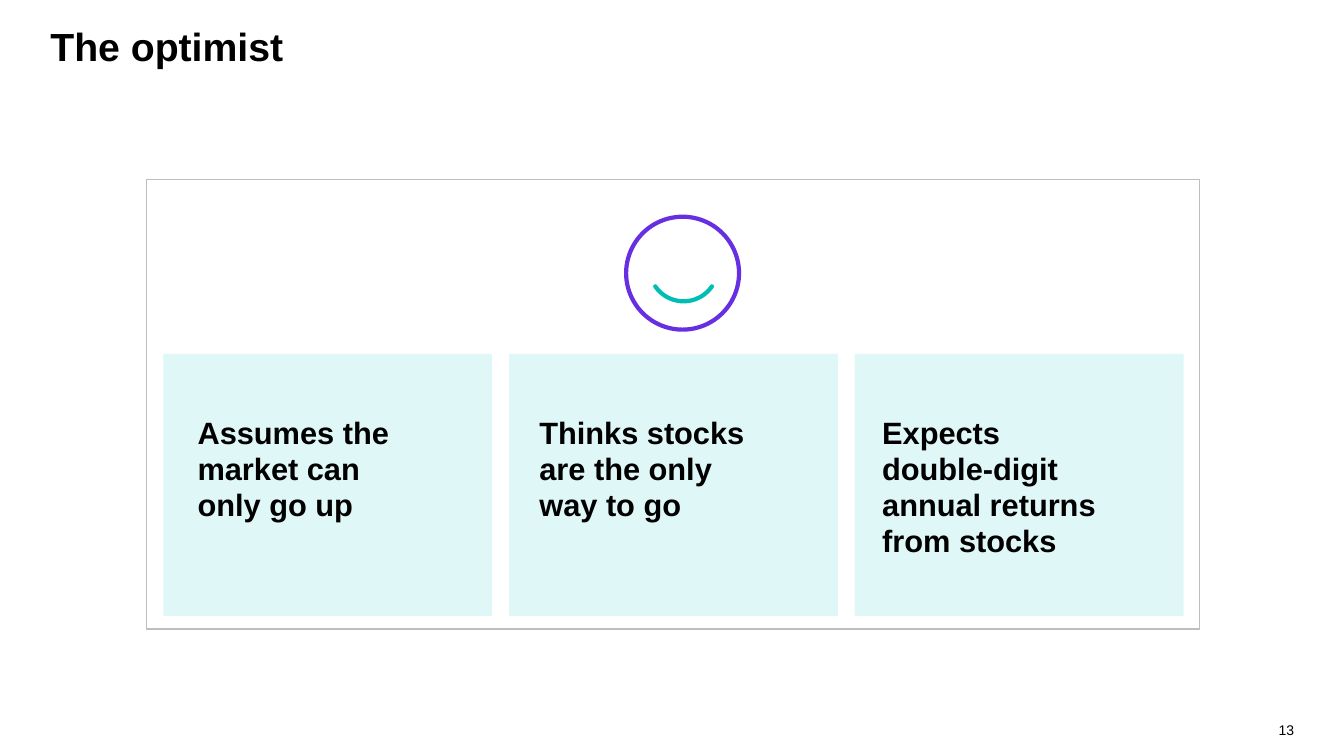
from math import cos, pi, sin

from lxml import etree
from pptx import Presentation
from pptx.dml.color import RGBColor
from pptx.enum.shapes import MSO_SHAPE
from pptx.enum.text import MSO_ANCHOR, MSO_AUTO_SIZE, PP_ALIGN
from pptx.util import Inches, Pt

COLORS = {
    "text": "000000",
    "card": "E0F7F7",
    "frame": "BEBEBE",
    "ring": "672FE2",
    "smile": "00BEB3",
}
CARDS = [
    ("Assumes the market can only go up", 0.34),
    ("Thinks stocks are the only way to go", 0.30),
    ("Expects double-digit annual returns from stocks", 0.27),
]


def color(name):
    """Return the named colour."""
    return RGBColor.from_string(COLORS[name])


def write(shape, text, size, bold, margins, spacing=1.0):
    """Set one left-aligned paragraph inside the given margins."""
    frame = shape.text_frame
    frame.word_wrap = True
    frame.auto_size = MSO_AUTO_SIZE.NONE
    frame.vertical_anchor = MSO_ANCHOR.TOP
    left, top, right = margins
    frame.margin_left, frame.margin_top = Inches(left), Inches(top)
    frame.margin_right, frame.margin_bottom = Inches(right), 0
    para = frame.paragraphs[0]
    para.alignment = PP_ALIGN.LEFT
    para.line_spacing = spacing
    para.space_before = Pt(0)
    span = para.add_run()
    span.text = text
    span.font.name = "Arial"
    span.font.size = Pt(size)
    span.font.bold = bold
    span.font.color.rgb = color("text")


def outline(shape, name, width):
    """Leave a shape unfilled and give it a coloured line."""
    shape.shadow.inherit = False
    shape.fill.background()
    shape.line.color.rgb = color(name)
    shape.line.width = Pt(width)


def add_title(page, left, top, width, height):
    """Place and format the title."""
    title = page.shapes.title
    title.left, title.top = Inches(left), Inches(top)
    title.width, title.height = Inches(width), Inches(height)
    write(title, "The optimist", 28, True, (0.01, 0.04, 0))


def add_face(page, left, top, size):
    """Draw a ring with a smiling mouth in a square box."""
    ring = page.shapes.add_shape(
        MSO_SHAPE.OVAL, Inches(left), Inches(top), Inches(size), Inches(size)
    )
    outline(ring, "ring", 3)
    center_x, center_y = left + size / 2 + 0.01, top + size / 2 - 0.06
    radius, spread, steps = 0.34, 0.31 * pi, 24
    points = []
    for step in range(steps + 1):
        angle = spread * (2 * step / steps - 1)
        points.append((
            Inches(center_x + radius * sin(angle)),
            Inches(center_y + radius * cos(angle)),
        ))
    builder = page.shapes.build_freeform(*points[0])
    builder.add_line_segments(points[1:], close=False)
    smile = builder.convert_to_shape()
    outline(smile, "smile", 3)
    smile.line._get_or_add_ln().set("cap", "rnd")
    etree.SubElement(
        smile.line._get_or_add_ln(),
        "{http://schemas.openxmlformats.org/drawingml/2006/main}round",
    )


def add_cards(page, left, top, width, height, gap):
    """Place the cards side by side with equal gaps."""
    card_width = (width - gap * (len(CARDS) - 1)) / len(CARDS)
    text_width = 2.18
    for index, (text, indent) in enumerate(CARDS):
        card = page.shapes.add_shape(
            MSO_SHAPE.RECTANGLE,
            Inches(left + index * (card_width + gap)), Inches(top),
            Inches(card_width), Inches(height),
        )
        card.shadow.inherit = False
        card.fill.solid()
        card.fill.fore_color.rgb = color("card")
        card.line.fill.background()
        margins = (indent, 0.61, card_width - indent - text_width)
        write(card, text, 22, True, margins, 0.98)


def add_panel(page, left, top, width, height):
    """Draw the framed panel with its face and cards."""
    frame = page.shapes.add_shape(
        MSO_SHAPE.RECTANGLE,
        Inches(left), Inches(top), Inches(width), Inches(height),
    )
    outline(frame, "frame", 1)
    add_face(page, left + 4.76, top + 0.37, 1.12)
    add_cards(page, left + 0.17, top + 1.73, 10.12, 2.6, 0.17)


def add_page_number(page, left, top, width, height):
    """Place the page number."""
    box = page.shapes.add_textbox(
        Inches(left), Inches(top), Inches(width), Inches(height)
    )
    write(box, "13", 10, False, (0.04, 0, 0))


def main():
    """Build and save the deck."""
    deck = Presentation()
    deck.slide_width, deck.slide_height = Inches(13.33), Inches(7.5)
    page = deck.slides.add_slide(deck.slide_layouts[5])
    add_title(page, 0.49, 0.18, 9.5, 0.83)
    add_panel(page, 1.45, 1.78, 10.45, 4.46)
    add_page_number(page, 12.64, 7.16, 0.25, 0.18)
    deck.save("out.pptx")


if __name__ == "__main__":
    main()
